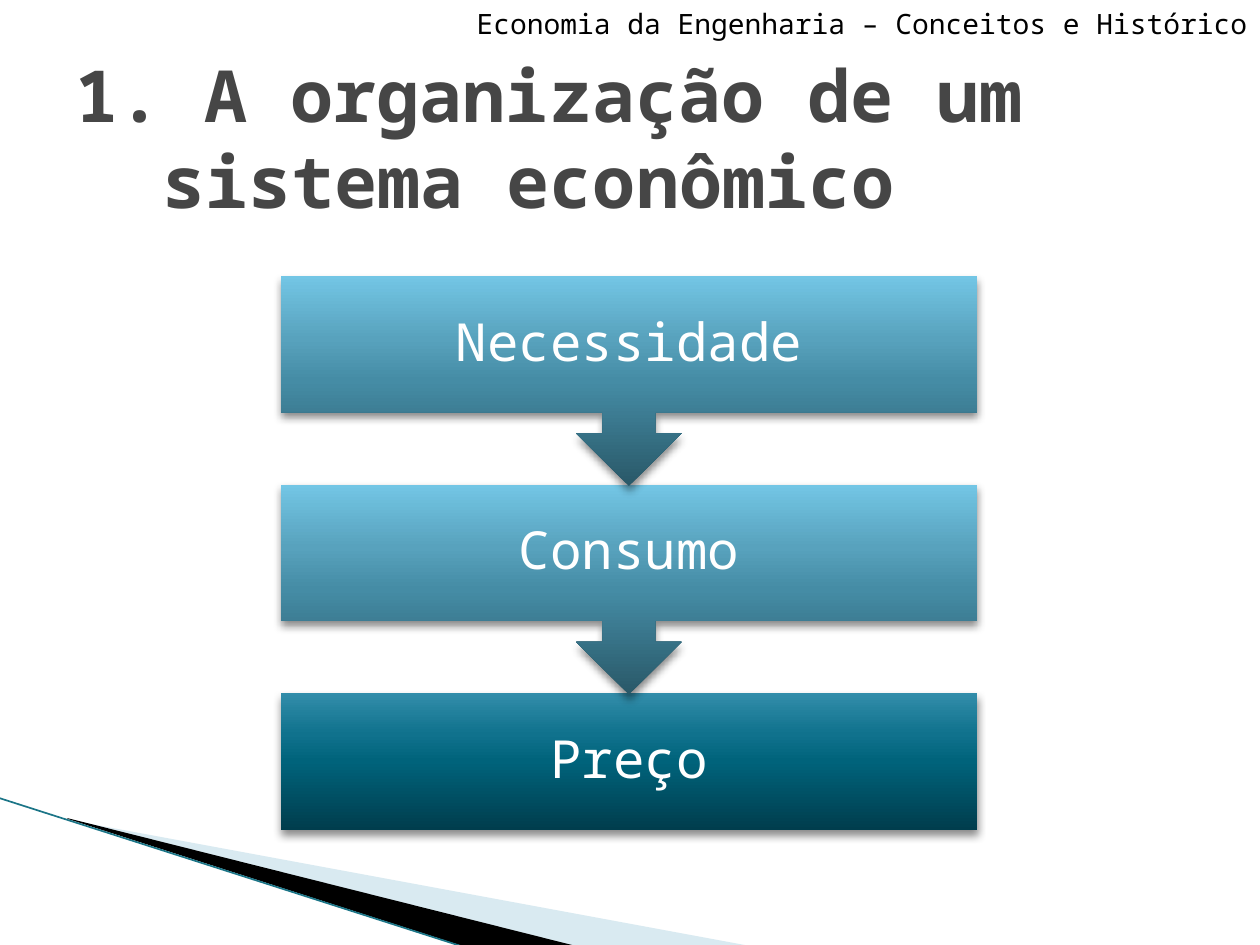
"""Build the slide on how an economic system is organised."""
from dataclasses import dataclass

from lxml.etree import SubElement
from pptx import Presentation
from pptx.dml.color import RGBColor
from pptx.enum.shapes import MSO_CONNECTOR, MSO_SHAPE as Preset
from pptx.enum.text import MSO_ANCHOR as Anchor, MSO_AUTO_SIZE as AutoSize, PP_ALIGN as Align
from pptx.oxml.ns import qn
from pptx.util import Pt


@dataclass(frozen=True)
class Theme:
    font: str = "Noto Sans Mono"
    title_size: int = 41
    step_size: int = 30
    header_size: int = 16
    title: str = "464646"
    header: str = "000000"
    step_text: str = "FFFFFF"
    wedge_light: str = "A0CBDC"
    wedge_dark: str = "000000"
    edge: str = "1B7587"
    shadow: str = "000000"
    callout: tuple = ((0, "295868"), (50, "458CA5"), (70, "58A2BD"), (100, "73C6E5"))
    last: tuple = ((0, "003D4D"), (50, "00637B"), (70, "10728D"), (100, "328DAA"))


theme = Theme()
PX = 914400 / 126


def px(*lengths):
    return [round(length * PX) for length in lengths]


def write(shape, text, size, color, align=Align.LEFT, anchor=Anchor.TOP, bold=False, spacing=None, inset=None):
    frame = shape.text_frame
    frame.word_wrap = True
    frame.vertical_anchor = anchor
    if inset is not None:
        frame.margin_left, frame.margin_top, frame.margin_right, frame.margin_bottom = px(*[inset] * 4)
    paragraph = frame.paragraphs[0]
    paragraph.text = text
    paragraph.alignment = align
    paragraph.line_spacing = spacing
    font = paragraph.runs[0].font
    font.name = theme.font
    font.size = Pt(size)
    font.bold = bold
    font.color.rgb = RGBColor.from_string(color)
    return paragraph


presentation = Presentation()
presentation.slide_width, presentation.slide_height = px(1260, 945)
slide = presentation.slides.add_slide(presentation.slide_layouts[5])
shapes = slide.shapes

wedges = [
    ([(69, 820), (750, 946), (575, 946), (69, 819)], theme.wedge_light, 40),
    ([(67, 818), (576, 946), (469, 948), (68, 819)], theme.wedge_dark, 100),
]
for points, color, opacity in wedges:
    builder = shapes.build_freeform(*points[0], scale=PX)
    builder.add_line_segments(points[1:])
    wedge = builder.convert_to_shape()
    wedge.shadow.inherit = False
    wedge.line.fill.background()
    wedge.fill.solid()
    wedge.fill.fore_color.rgb = RGBColor.from_string(color)
    if opacity < 100:
        fill_color = wedge.element.spPr.find(".//" + qn("a:srgbClr"))
        SubElement(fill_color, qn("a:alpha"), val=str(opacity * 1000))

edge = shapes.add_connector(MSO_CONNECTOR.STRAIGHT, *px(-1, 798, 467, 948))
edge.line.color.rgb = RGBColor.from_string(theme.edge)
edge.line.width = Pt(0.95)
SubElement(edge.element.spPr, qn("a:effectLst"))

steps = ["Necessidade", "Consumo", "Preço"]
top, pitch = 276, 208.5
for index, text in reversed(list(enumerate(steps))):
    is_last = index == len(steps) - 1
    preset, height, stops = (
        (Preset.RECTANGLE, 137, theme.last) if is_last else (Preset.DOWN_ARROW_CALLOUT, 210, theme.callout)
    )
    step = shapes.add_shape(preset, *px(281, top + index * pitch, 696, height))
    step.line.fill.background()
    step.fill.gradient()
    step.fill.gradient_angle = 90
    properties = step.element.spPr
    stop_list = properties.find(".//" + qn("a:gsLst"))
    stop_list.clear()
    for position, color in stops:
        stop = SubElement(stop_list, qn("a:gs"), pos=str(position * 1000))
        SubElement(stop, qn("a:srgbClr"), val=color)
    step.shadow.inherit = False
    shadow = SubElement(
        properties.find(qn("a:effectLst")), qn("a:outerShdw"),
        blurRad=str(Pt(5)), dist=str(Pt(3)), dir="5400000", rotWithShape="0",
    )
    shadow_color = SubElement(shadow, qn("a:srgbClr"), val=theme.shadow)
    SubElement(shadow_color, qn("a:alpha"), val="45000")
    write(step, text, theme.step_size, theme.step_text,
          align=Align.CENTER, anchor=Anchor.MIDDLE, spacing=0.9, inset=29)

title = shapes.title
title.left, title.top, title.width, title.height = px(63, 38, 1134, 198)
heading = write(title, "1. A organização de um sistema econômico", theme.title_size, theme.title,
                anchor=Anchor.MIDDLE, bold=True)
indent = px(87)[0]
heading_properties = heading._p.get_or_add_pPr()
heading_properties.set("marL", str(indent))
heading_properties.set("indent", str(-indent))
title.text_frame.auto_size = AutoSize.NONE

header = shapes.add_textbox(*px(0, 0, 1260, 47))
write(header, "Economia da Engenharia – Conceitos e Histórico", theme.header_size, theme.header, align=Align.RIGHT)
header.text_frame.auto_size = AutoSize.SHAPE_TO_FIT_TEXT

presentation.save("out.pptx")
